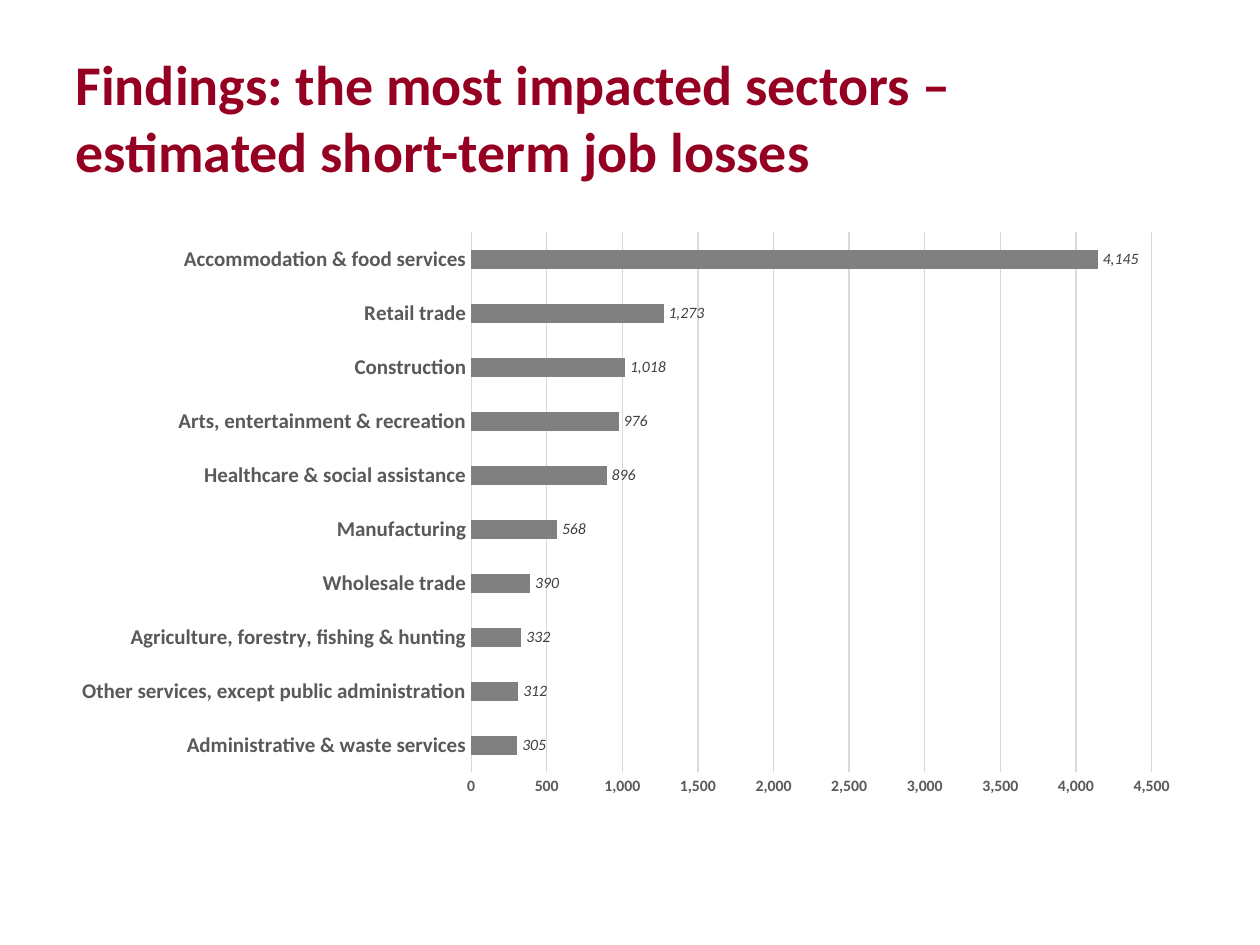
import pptx
import pptx.chart.data
import pptx.dml.color
import pptx.enum.chart
import pptx.enum.text
import pptx.oxml
import pptx.util
from pptx.util import Inches

JOB_LOSSES = {
    "Administrative & waste services": 305,
    "Other services, except public administration": 312,
    "Agriculture, forestry, fishing & hunting": 332,
    "Wholesale trade": 390,
    "Manufacturing": 568,
    "Healthcare & social assistance": 896,
    "Arts, entertainment & recreation": 976,
    "Construction": 1018,
    "Retail trade": 1273,
    "Accommodation & food services": 4145,
}


def rgb(value):
    return pptx.dml.color.RGBColor.from_string(value)


class Deck:
    font_name = "Calibri"
    accent = "950022"
    bar_color = "808080"
    axis_color = "595959"
    label_color = "404040"
    grid_color = "D9D9D9"

    def __init__(self, width, height):
        self.prs = pptx.Presentation()
        self.prs.slide_width = width
        self.prs.slide_height = height
        self.s = self.prs.slides.add_slide(self.prs.slide_layouts[5])

    def style(self, font, size, color, bold=False, italic=False):
        font.name = self.font_name
        font.size = pptx.util.Pt(size)
        font.color.rgb = rgb(color)
        font.bold = bold
        font.italic = italic

    def thin_line(self, line):
        line.color.rgb = rgb(self.grid_color)
        line.width = pptx.util.Pt(0.75)

    def title(self, text, left, top, width, height):
        sp = self.s.shapes.title
        sp.left, sp.top, sp.width, sp.height = left, top, width, height
        tf = sp.text_frame
        tf.text = text
        tf.word_wrap = True
        tf.margin_right = Inches(0.3)
        tf.vertical_anchor = pptx.enum.text.MSO_ANCHOR.MIDDLE
        p = tf.paragraphs[0]
        p.alignment = pptx.enum.text.PP_ALIGN.LEFT
        self.style(p.runs[0].font, 32, self.accent, bold=True)

    def bar_chart(self, values, left, top, width, height):
        data = pptx.chart.data.CategoryChartData(number_format="#,##0")
        data.categories = list(values)
        data.add_series("Series 1", list(values.values()))
        kind = pptx.enum.chart.XL_CHART_TYPE.BAR_CLUSTERED
        chart = self.s.shapes.add_chart(kind, left, top, width, height, data).chart
        chart.has_legend = False
        chart.has_title = False
        self.style(chart.font, 10, "000000")
        self.bars(chart.plots[0])
        self.axis(chart.category_axis, 12)
        self.thin_line(chart.category_axis.format.line)
        axis = chart.value_axis
        self.axis(axis, 9)
        axis.format.line.fill.background()
        axis.minimum_scale, axis.maximum_scale, axis.major_unit = 0, 4500, 500
        axis.tick_labels.number_format = "#,##0"
        axis.tick_labels.number_format_is_linked = False
        axis.has_major_gridlines = True
        self.thin_line(axis.major_gridlines.format.line)
        self.plot_layout(chart, x=0.36, y=0.02, w=0.6, h=0.92)

    def bars(self, plot):
        plot.gap_width = 182
        plot.vary_by_categories = False
        fill = plot.series[0].format.fill
        fill.solid()
        fill.fore_color.rgb = rgb(self.bar_color)
        plot.has_data_labels = True
        labels = plot.data_labels
        labels.show_value = True
        labels.number_format = "#,##0"
        labels.number_format_is_linked = False
        labels.position = pptx.enum.chart.XL_LABEL_POSITION.OUTSIDE_END
        self.style(labels.font, 9, self.label_color, italic=True)

    def axis(self, axis, size):
        axis.has_major_gridlines = False
        axis.major_tick_mark = pptx.enum.chart.XL_TICK_MARK.NONE
        axis.minor_tick_mark = pptx.enum.chart.XL_TICK_MARK.NONE
        self.style(axis.tick_labels.font, size, self.axis_color, bold=True)

    def plot_layout(self, chart, **box):
        sizes = "".join(f'<c:{key} val="{value}"/>' for key, value in box.items())
        layout = pptx.oxml.parse_xml(
            '<c:layout xmlns:c="http://schemas.openxmlformats.org/drawingml/2006/chart">'
            '<c:manualLayout><c:layoutTarget val="inner"/>'
            '<c:xMode val="edge"/><c:yMode val="edge"/>'
            f"{sizes}</c:manualLayout></c:layout>"
        )
        plot_area = chart.plots[0]._element.getparent()
        for old in plot_area.xpath("c:layout"):
            plot_area.remove(old)
        plot_area.insert(0, layout)


def main():
    deck = Deck(Inches(10), Inches(7.5))
    deck.title(
        "Findings: the most impacted sectors – estimated short-term job losses",
        Inches(0.5), Inches(0.3), Inches(9), Inches(1.25),
    )
    deck.bar_chart(JOB_LOSSES, Inches(0.5), Inches(1.75), Inches(9), Inches(4.66))
    deck.prs.save("out.pptx")


if __name__ == "__main__":
    main()
